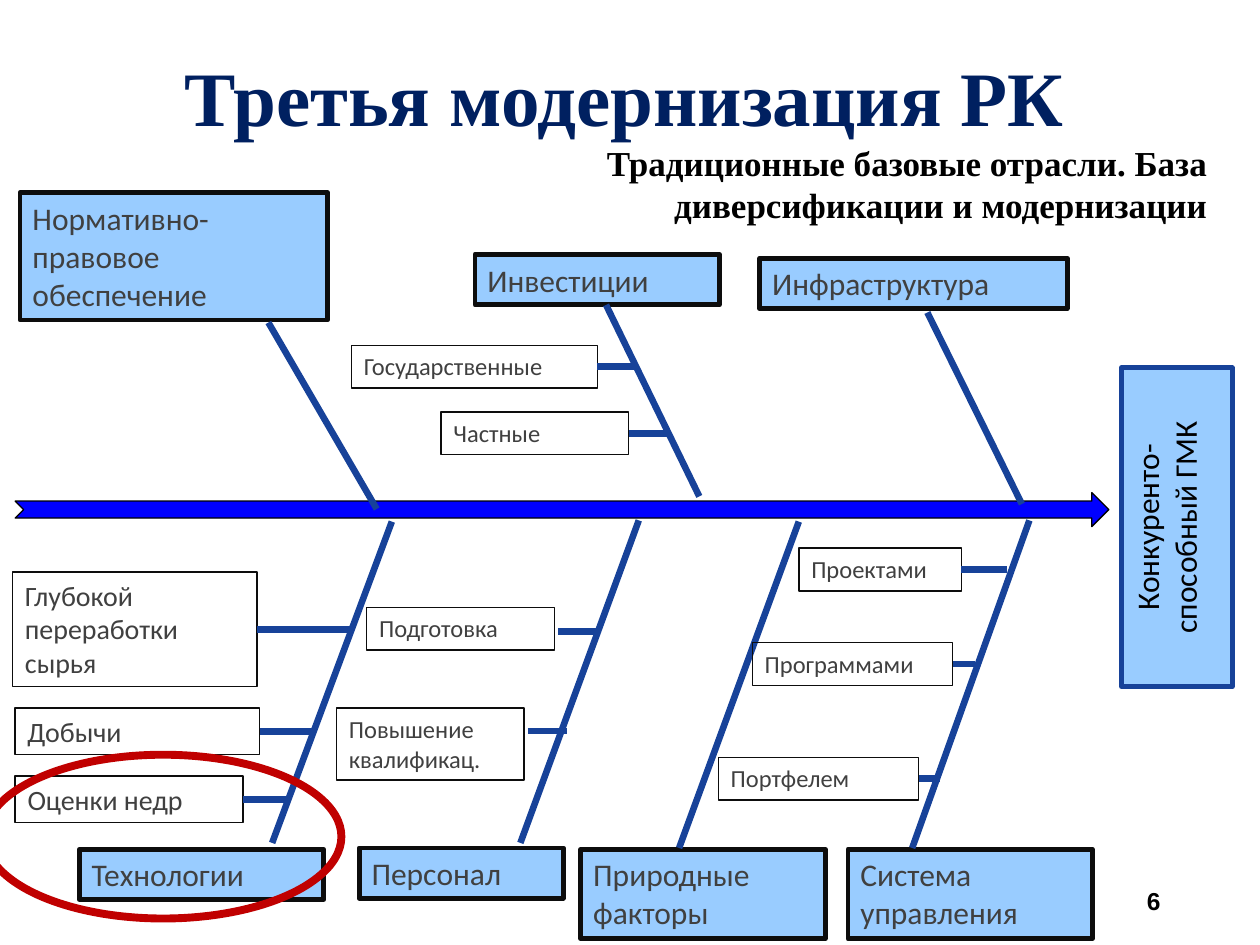
from dataclasses import dataclass

import pptx
import pptx.dml.color
import pptx.enum.shapes
import pptx.enum.text
import pptx.oxml
import pptx.util
from pptx.oxml import ns

Inches = pptx.util.Inches
Pt = pptx.util.Pt
Shape = pptx.enum.shapes.MSO_SHAPE
Align = pptx.enum.text.PP_ALIGN
Anchor = pptx.enum.text.MSO_ANCHOR
Fit = pptx.enum.text.MSO_AUTO_SIZE

NAVY, SKY, INK, GREY = "174299", "99CCFF", "0D0D0D", "404040"
RIGHT_SIDE = 3


@dataclass
class Box:
    text: str
    left: float
    top: float
    width: float
    height: float


@dataclass
class Cause:
    """A detail box with a twig that ends at x = tip."""
    box: Box
    size: int
    tip: float


@dataclass
class Loose:
    """A detail box whose twig starts a little away from it."""
    box: Box
    start: float
    tip: float
    level: float


HEADS = [
    Box("Инвестиции", 3.77, 2.02, 1.94, 0.4),
    Box("Нормативно-правовое обеспечение", 0.16, 1.53, 2.44, 1.01),
    Box("Инфраструктура", 6.03, 2.05, 2.44, 0.4),
    Box("Технологии", 0.63, 6.74, 1.94, 0.4),
    Box("Природные факторы", 4.61, 6.74, 1.94, 0.71),
    Box("Персонал", 2.85, 6.73, 1.62, 0.4),
    Box("Система управления", 6.73, 6.74, 1.94, 0.71),
]
BONES = [
    (2.13, 2.56, 2.99, 4.04),
    (4.81, 2.42, 5.55, 3.94),
    (7.36, 2.48, 8.11, 4.0),
    (8.17, 4.13, 7.24, 6.73),
    (6.34, 4.14, 5.39, 6.73),
    (5.07, 4.13, 4.13, 6.69),
    (3.11, 4.14, 2.16, 6.69),
]
CAUSES = [
    Cause(Box("Глубокой переработки сырья", 0.1, 4.54, 1.94, 0.91), 16, 2.8),
    Cause(Box("Добычи", 0.12, 5.62, 1.94, 0.37), 16, 2.48),
    Cause(Box("Оценки недр", 0.12, 6.16, 1.81, 0.37), 16, 2.29),
    Cause(Box("Проектами", 6.34, 4.35, 1.29, 0.34), 14, 7.99),
    Cause(Box("Программами", 5.97, 5.1, 1.59, 0.34), 14, 7.74),
    Cause(Box("Портфелем", 5.7, 6.01, 1.59, 0.34), 14, 7.46),
    Cause(Box("Государственные", 2.79, 2.74, 1.95, 0.34), 14, 5.05),
    Cause(Box("Частные", 3.5, 3.27, 1.49, 0.34), 14, 5.31),
]
LOOSE = [
    Loose(Box("Подготовка", 2.91, 4.82, 1.49, 0.34), 4.43, 4.74, 5.01),
    Loose(Box("Повышение квалификац.", 2.67, 5.62, 1.49, 0.57), 4.19, 4.5, 5.8),
]


def tint(code: str) -> pptx.dml.color.RGBColor:
    return pptx.dml.color.RGBColor.from_string(code)


def write(frame, text: str, size: int, name: str, color: str,
          align=Align.LEFT, bold: bool = False, anchor=Anchor.TOP,
          fit=Fit.SHAPE_TO_FIT_TEXT):
    frame.text = text
    frame.word_wrap = True
    frame.auto_size = fit
    frame.vertical_anchor = anchor
    para = frame.paragraphs[0]
    para.alignment = align
    font = para.font
    font.size, font.name, font.bold = Pt(size), name, bold
    font.color.rgb = tint(color)
    return para


def draw(slide, kind, box: Box, line: str, width: float, fill: str = ""):
    shape = slide.shapes.add_shape(
        kind, Inches(box.left), Inches(box.top),
        Inches(box.width), Inches(box.height))
    shape.shadow.inherit = False
    if fill:
        shape.fill.solid()
        shape.fill.fore_color.rgb = tint(fill)
    else:
        shape.fill.background()
    shape.line.color.rgb = tint(line)
    shape.line.width = Pt(width)
    return shape


def label(slide, box: Box, size: int, width: float, fill: str = ""):
    shape = draw(slide, Shape.RECTANGLE, box, INK, width, fill)
    write(shape.text_frame, box.text, size, "Calibri", GREY)
    return shape


def link(slide, x1: float, y1: float, x2: float, y2: float):
    line = slide.shapes.add_connector(
        pptx.enum.shapes.MSO_CONNECTOR.STRAIGHT,
        Inches(x1), Inches(y1), Inches(x2), Inches(y2))
    line.line.color.rgb = tint(NAVY)
    line.line.width = Pt(3.75)
    props = line._element.spPr
    props.append(pptx.oxml.parse_xml(f"<a:effectLst {ns.nsdecls('a')}/>"))
    return line


def note(slide, box: Box):
    return slide.shapes.add_textbox(
        Inches(box.left), Inches(box.top),
        Inches(box.width), Inches(box.height)).text_frame


def main() -> None:
    deck = pptx.Presentation()
    deck.slide_width, deck.slide_height = Inches(10), Inches(7.5)
    slide = deck.slides.add_slide(deck.slide_layouts[5])

    title = slide.shapes.title
    title.left, title.top = Inches(0.17), Inches(0.29)
    title.width, title.height = Inches(9.58), Inches(1.03)
    para = write(title.text_frame, "Третья модернизация РК", 44,
                 "Times New Roman", "002060", Align.CENTER, True,
                 Anchor.MIDDLE, Fit.NONE)
    para.line_spacing = 0.9

    spine = Box("", 0.12, 3.91, 8.68, 0.27)
    draw(slide, Shape.NOTCHED_RIGHT_ARROW, spine, "000000", 0.75, "0000FF")

    goal = Box("Конкуренто-способный ГМК", 8.9, 2.92, 0.88, 2.53)
    shape = draw(slide, Shape.RECTANGLE, goal, NAVY, 2.75, SKY)
    write(shape.text_frame, goal.text, 18, "Calibri", "000000", Align.CENTER)
    shape._element.txBody.bodyPr.set("vert", "vert270")

    for head in HEADS:
        label(slide, head, 18, 2.75, SKY)
    for bone in BONES:
        link(slide, *bone)
    for cause in CAUSES:
        box = cause.box
        shape = label(slide, box, cause.size, 0.75)
        mid = box.top + box.height / 2
        twig = link(slide, box.left + box.width, mid, cause.tip, mid)
        twig.begin_connect(shape, RIGHT_SIDE)
    for loose in LOOSE:
        label(slide, loose.box, 14, 0.75)
        link(slide, loose.start, loose.level, loose.tip, loose.level)

    ring = Box("", -0.12, 5.99, 2.83, 1.3)
    draw(slide, Shape.OVAL, ring, "C00000", 4.5)

    theme = Box("Традиционные базовые отрасли. База диверсификации и модернизации",
                4.09, 1.07, 5.59, 0.77)
    para = write(note(slide, theme), theme.text, 20, "Times New Roman",
                 "000000", Align.RIGHT, True)
    para._p.get_or_add_pPr().set("marL", str(Inches(0.05)))

    page = Box("6", 7.06, 6.95, 2.25, 0.4)
    write(note(slide, page), page.text, 14, "Arial", "000000", Align.RIGHT,
          True, Anchor.MIDDLE, Fit.NONE)

    deck.save("out.pptx")


if __name__ == "__main__":
    main()
